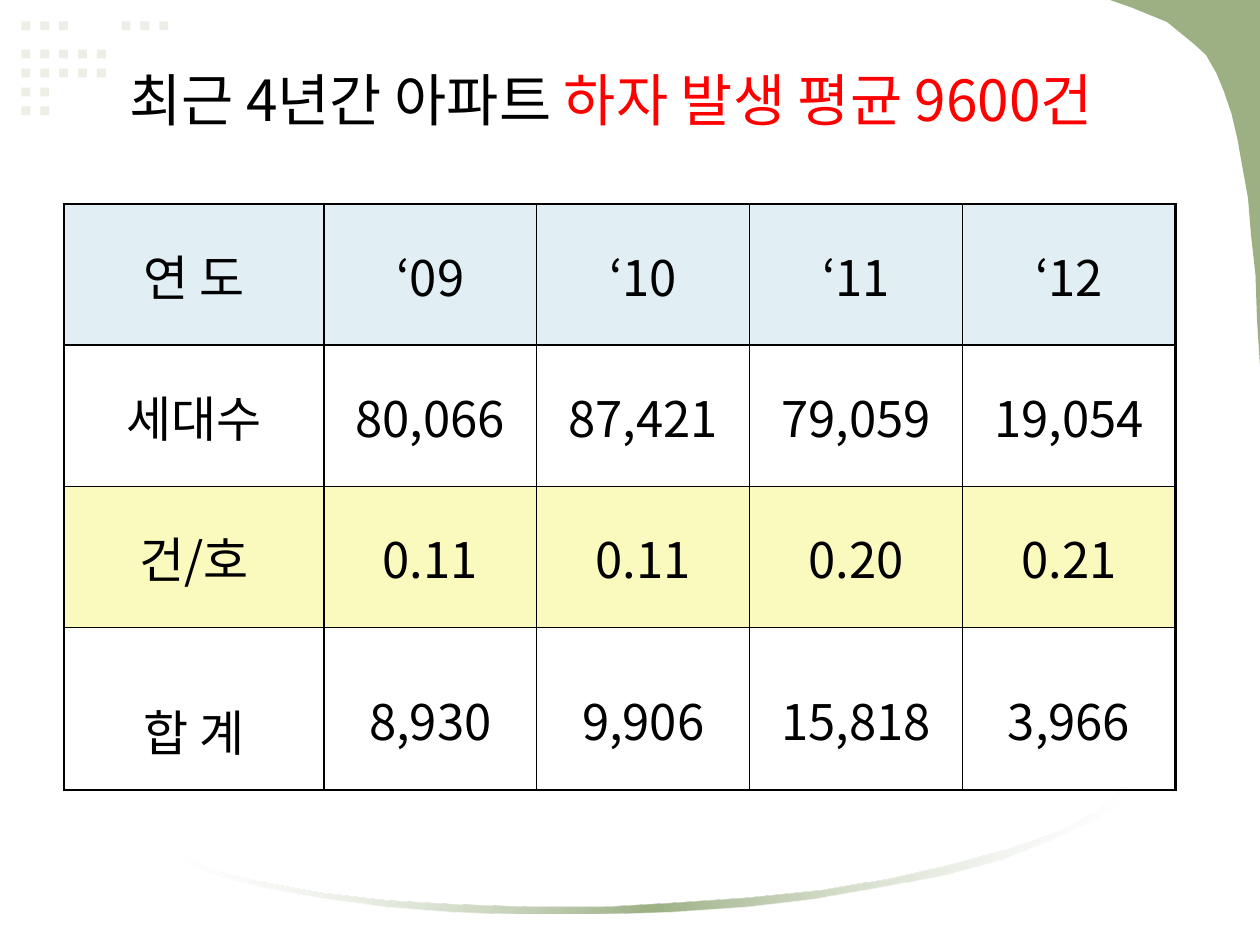
import pptx
import pptx.util
import pptx.dml.color
import pptx.enum.shapes
import pptx.enum.text
import pptx.oxml
import pptx.oxml.ns
from lxml import etree

COLORS = {
    "ink": "000000",
    "alert": "FF0000",
    "white": "FFFFFF",
    "green": "9CB084",
    "dot": "EBEFE6",
    "header": "E1EFF4",
    "rate": "FAFABF",
}
FONT = "Noto Sans CJK KR"
WIDTH = pptx.util.Inches(10)
HEIGHT = pptx.util.Inches(7.5)
qn = pptx.oxml.ns.qn

DOT_ROWS = [
    (0, (0, 1, 2, 5.3, 6.3, 7.3)),
    (1.5, range(5)),
    (2.5, range(5)),
    (3.5, range(2)),
    (4.5, range(2)),
]
CORNER = [
    (0, 0), (1, 0), (1, 1), (0.98, 0.87), (0.97, 0.75), (0.94, 0.64),
    (0.92, 0.54), (0.88, 0.45), (0.85, 0.38), (0.81, 0.31), (0.76, 0.25),
    (0.71, 0.2), (0.64, 0.15), (0.56, 0.12), (0.47, 0.09), (0.38, 0.06),
    (0.26, 0.04), (0.14, 0.02),
]
ARC_LOWER = [
    (1, 0), (1, 0.07), (0.97, 0.25), (0.92, 0.42), (0.87, 0.57),
    (0.81, 0.69), (0.74, 0.79), (0.67, 0.88), (0.6, 0.94), (0.52, 0.98),
    (0.44, 1), (0.36, 1), (0.29, 0.98), (0.22, 0.94), (0.15, 0.87),
    (0.09, 0.79), (0.04, 0.69), (0, 0.57),
]
ARC_UPPER = [
    (0, 0.54), (0.04, 0.66), (0.09, 0.75), (0.15, 0.83), (0.22, 0.89),
    (0.29, 0.92), (0.37, 0.94), (0.45, 0.94), (0.52, 0.91), (0.6, 0.87),
    (0.68, 0.81), (0.75, 0.72), (0.81, 0.62), (0.87, 0.5), (0.93, 0.35),
    (0.97, 0.19),
]
DEFECTS = [
    ["연 도", "‘09", "‘10", "‘11", "‘12"],
    ["세대수", "80,066", "87,421", "79,059", "19,054"],
    ["건/호", "0.11", "0.11", "0.20", "0.21"],
    ["합 계", "8,930", "9,906", "15,818", "3,966"],
]
ROW_FILLS = ["header", None, "rate", None]


def inches(*lengths):
    return tuple(pptx.util.Inches(length) for length in lengths)


def rgb(name):
    return pptx.dml.color.RGBColor.from_string(COLORS[name])


def style_run(run, size, color):
    run.font.size = pptx.util.Pt(size)
    run.font.name = FONT
    run.font.color.rgb = rgb(color)
    east_asian = etree.Element(qn("a:ea"), typeface=FONT)
    run.font._element.find(qn("a:latin")).addnext(east_asian)


def paint(shape, color):
    shape.shadow.inherit = False
    shape.line.fill.background()
    shape.fill.solid()
    shape.fill.fore_color.rgb = rgb(color)


def add_dots(slide, box):
    left, top, pitch, size = box
    for row, columns in DOT_ROWS:
        for column in columns:
            dot = slide.shapes.add_shape(
                pptx.enum.shapes.MSO_SHAPE.RECTANGLE,
                int(left + column * pitch), int(top + row * pitch), size, size)
            paint(dot, "dot")


def add_outline(slide, box, shares):
    left, top, width, height = box
    points = [(left + x * width, top + y * height) for x, y in shares]
    builder = slide.shapes.build_freeform(*points[0])
    builder.add_line_segments(points[1:], close=True)
    outline = builder.convert_to_shape()
    paint(outline, "green")
    return outline


def add_arc(slide, box):
    arc = add_outline(slide, box, ARC_LOWER + ARC_UPPER)
    arc.fill.gradient()
    arc.fill.gradient_angle = 0
    stops = arc._element.spPr.find(qn("a:gradFill")).find(qn("a:gsLst"))
    for stop in list(stops):
        stops.remove(stop)
    for share, color, opacity in [(0, "white", 30), (50, "green", 100), (100, "white", 30)]:
        stop = etree.SubElement(stops, qn("a:gs"), pos=str(share * 1000))
        tint = etree.SubElement(stop, qn("a:srgbClr"), val=COLORS[color])
        etree.SubElement(tint, qn("a:alpha"), val=str(opacity * 1000))


def add_title(slide, box):
    title = slide.shapes.title
    title.left, title.top, title.width, title.height = box
    frame = title.text_frame
    frame.vertical_anchor = pptx.enum.text.MSO_ANCHOR.MIDDLE
    frame.word_wrap = True
    paragraph = frame.paragraphs[0]
    paragraph.alignment = pptx.enum.text.PP_ALIGN.CENTER
    for text, color in [("최근 4년간 아파트 ", "ink"), ("하자 발생 평균 9600건", "alert")]:
        run = paragraph.add_run()
        run.text = text
        style_run(run, 32.4, color)


def set_borders(cell, widths):
    properties = cell._tc.get_or_add_tcPr()
    for side, width in widths.items():
        line = etree.SubElement(
            properties, qn("a:ln" + side), w=str(pptx.util.Pt(width)))
        fill = etree.SubElement(line, qn("a:solidFill"))
        etree.SubElement(fill, qn("a:srgbClr"), val=COLORS["ink"])


def fill_cell(cell, text, color, spacing):
    cell.margin_left = cell.margin_right = pptx.util.Inches(0.02)
    cell.margin_top = cell.margin_bottom = pptx.util.Inches(0.02)
    cell.vertical_anchor = pptx.enum.text.MSO_ANCHOR.MIDDLE
    if color:
        cell.fill.solid()
        cell.fill.fore_color.rgb = rgb(color)
    else:
        cell.fill.background()
    paragraph = cell.text_frame.paragraphs[0]
    paragraph.text = text
    paragraph.alignment = pptx.enum.text.PP_ALIGN.CENTER
    paragraph.line_spacing = spacing
    style_run(paragraph.runs[0], 28, "ink")


def add_defect_table(slide, box):
    left, top, width, height = box
    last_row, last_column = len(DEFECTS) - 1, len(DEFECTS[0]) - 1
    table = slide.shapes.add_table(
        last_row + 1, last_column + 1, left, top, width, height).table
    table.horz_banding = False
    year_width, = inches(1.69)
    body_height, = inches(1.12)
    for index, column in enumerate(table.columns):
        column.width = year_width if index else width - last_column * year_width
    for index, row in enumerate(table.rows):
        row.height = body_height if index < last_row else height - last_row * body_height
    for r, values in enumerate(DEFECTS):
        for c, value in enumerate(values):
            cell = table.cell(r, c)
            set_borders(cell, {
                "L": 1.5 if c == 0 else 1,
                "R": 1.5 if c == last_column else 1,
                "T": 1.5 if r <= 1 else 1,
                "B": 1.5 if r in (0, last_row) else 1,
            })
            spacing = 1.0 if r < last_row else 1.3 if c else 1.6
            fill_cell(cell, value, ROW_FILLS[r], spacing)


def main():
    deck = pptx.Presentation()
    deck.slide_width, deck.slide_height = WIDTH, HEIGHT
    slide = deck.slides.add_slide(deck.slide_layouts[5])
    slide.background.fill.solid()
    slide.background.fill.fore_color.rgb = rgb("white")
    add_dots(slide, inches(0.17, 0.17, 0.15, 0.07))
    add_outline(slide, inches(8.81, 0, 1.19, 2.91), CORNER)
    add_arc(slide, inches(1.42, 6.25, 7.5, 1))
    add_title(slide, inches(0.35, 0.29, 9, 0.99))
    add_defect_table(slide, inches(0.51, 1.62, 8.82, 4.65))
    deck.save("out.pptx")


if __name__ == "__main__":
    main()
